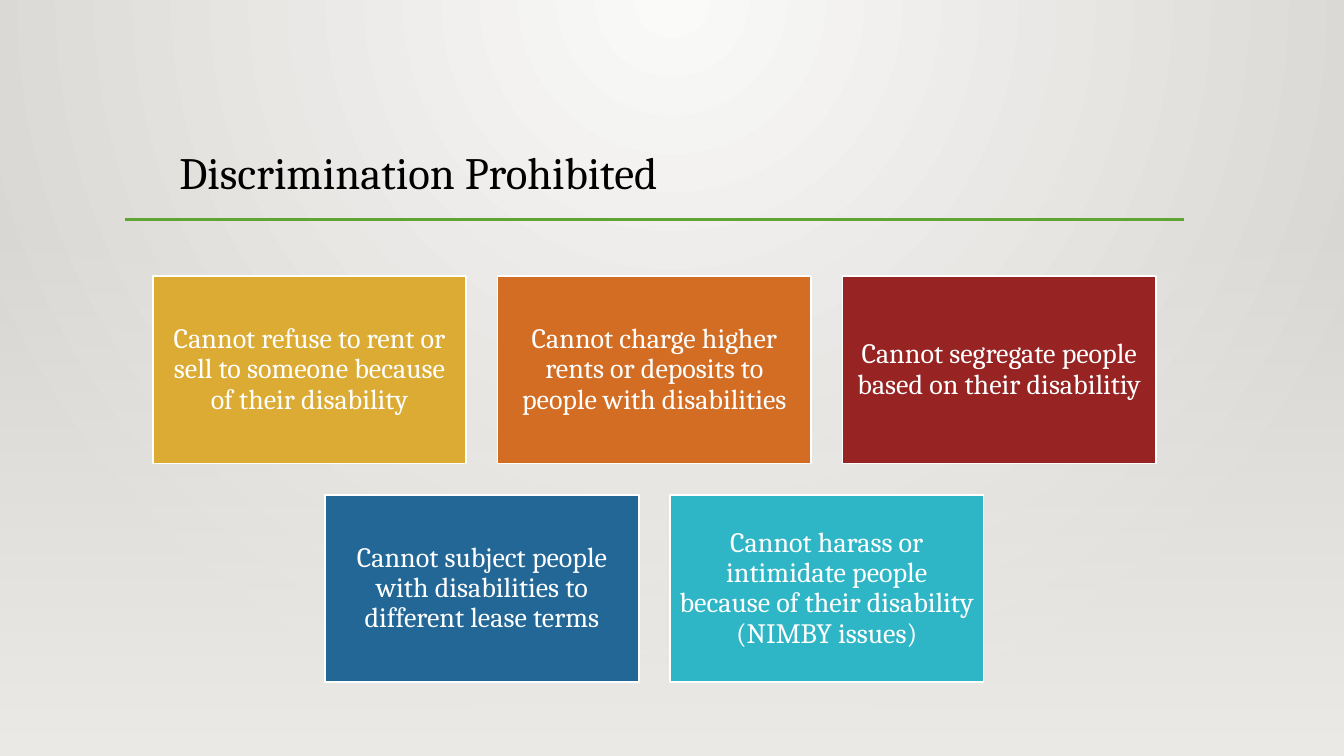
from lxml import etree
from pptx import Presentation
from pptx.dml.color import RGBColor
from pptx.enum.shapes import MSO_CONNECTOR, MSO_SHAPE
from pptx.enum.text import MSO_ANCHOR, MSO_AUTO_SIZE, PP_ALIGN
from pptx.oxml import parse_xml
from pptx.oxml.ns import nsdecls, qn
from pptx.util import Inches, Pt

RECTANGLE = MSO_SHAPE.RECTANGLE
STRAIGHT = MSO_CONNECTOR.STRAIGHT
MIDDLE, BOTTOM = MSO_ANCHOR.MIDDLE, MSO_ANCHOR.BOTTOM
LEFT, CENTER = PP_ALIGN.LEFT, PP_ALIGN.CENTER
NO_AUTOFIT = MSO_AUTO_SIZE.NONE

TITLE = "Discrimination Prohibited"
PROHIBITION_ROWS = [
    [
        ("Cannot refuse to rent or sell to someone because of their disability", "gold"),
        ("Cannot charge higher rents or deposits to people with disabilities", "orange"),
        ("Cannot segregate people based on their disabilitiy", "red"),
    ],
    [
        ("Cannot subject people with disabilities to different lease terms", "blue"),
        ("Cannot harass or intimidate people because of their disability (NIMBY issues)", "teal"),
    ],
]
COLORS = {
    "gold": "DCAB34", "orange": "D26D23", "red": "972323",
    "blue": "236797", "teal": "2FB6C6", "green": "5FA534",
    "black": "000000", "white": "FFFFFF",
    "glow": "FAFAF9", "edge": "D7D5D2", "floor": "EDEBE7",
}
FONT = "Cambria"
SLIDE_W, SLIDE_H = 13.33, 7.5
CARD_W, CARD_H, GAP = 3.11, 1.86, 0.31
CARDS_TOP, CARDS_CENTER = 2.74, 6.49
FLOOR_TOP = 2.21

RADIAL = '<a:path path="circle"><a:fillToRect l="43000" r="43000" b="100000"/></a:path>'
DOWNWARD = '<a:lin ang="5400000" scaled="0"/>'


def rgb(name):
    return RGBColor.from_string(COLORS[name])


def make_gradient(solid_fill, start, end, direction, start_alpha=100):
    """Swap a solidFill element for a two-stop gradient."""
    gradient = parse_xml(
        f'<a:gradFill {nsdecls("a")} rotWithShape="1"><a:gsLst>'
        f'<a:gs pos="0"><a:srgbClr val="{COLORS[start]}">'
        f'<a:alpha val="{start_alpha * 1000}"/></a:srgbClr></a:gs>'
        f'<a:gs pos="100000"><a:srgbClr val="{COLORS[end]}"/></a:gs>'
        f'</a:gsLst>{direction}</a:gradFill>'
    )
    solid_fill.getparent().replace(solid_fill, gradient)


def style_paragraph(paragraph, size, color, alignment):
    paragraph.alignment = alignment
    paragraph.line_spacing = 0.9
    paragraph.font.name = FONT
    paragraph.font.size = Pt(size)
    paragraph.font.color.rgb = rgb(color)


def add_backdrop(slide):
    slide.background.fill.solid()
    make_gradient(slide.element.xpath(".//p:bgPr/a:solidFill")[0],
                  "glow", "edge", RADIAL)
    floor = slide.shapes.add_shape(RECTANGLE, 0, Inches(FLOOR_TOP), Inches(SLIDE_W),
                                   Inches(SLIDE_H - FLOOR_TOP))
    floor.shadow.inherit = False
    floor.line.fill.background()
    floor.fill.solid()
    make_gradient(floor.element.spPr.find(qn("a:solidFill")),
                  "floor", "floor", DOWNWARD, start_alpha=0)


def add_heading(slide):
    title = slide.shapes.title
    title.left, title.top = Inches(1.68), Inches(0.88)
    title.width, title.height = Inches(10.41), Inches(1.15)
    frame = title.text_frame
    frame.text = TITLE
    frame.auto_size = NO_AUTOFIT
    frame.vertical_anchor = BOTTOM
    style_paragraph(frame.paragraphs[0], 32, "black", LEFT)

    rule = slide.shapes.add_connector(STRAIGHT, Inches(1.24), Inches(2.18),
                                      Inches(11.74), Inches(2.18))
    rule.line.color.rgb = rgb("green")
    rule.line.width = Pt(2.5)
    etree.SubElement(rule.element.spPr, qn("a:effectLst"))


def add_card(slide, left, top, text, color):
    card = slide.shapes.add_shape(RECTANGLE, Inches(left), Inches(top),
                                  Inches(CARD_W), Inches(CARD_H))
    card.shadow.inherit = False
    card.fill.solid()
    card.fill.fore_color.rgb = rgb(color)
    card.line.color.rgb = rgb("white")
    card.line.width = Pt(1.25)
    frame = card.text_frame
    frame.text = text
    frame.word_wrap = True
    frame.vertical_anchor = MIDDLE
    frame.margin_left = frame.margin_right = Inches(0.08)
    frame.margin_top = frame.margin_bottom = Inches(0.08)
    style_paragraph(frame.paragraphs[0], 20, "white", CENTER)


def main():
    prs = Presentation()
    prs.slide_width, prs.slide_height = Inches(SLIDE_W), Inches(SLIDE_H)
    slide = prs.slides.add_slide(prs.slide_layouts[5])
    add_backdrop(slide)
    add_heading(slide)
    for row, prohibitions in enumerate(PROHIBITION_ROWS):
        row_width = len(prohibitions) * (CARD_W + GAP) - GAP
        row_left = CARDS_CENTER - row_width / 2
        top = CARDS_TOP + row * (CARD_H + GAP)
        for column, (text, color) in enumerate(prohibitions):
            add_card(slide, row_left + column * (CARD_W + GAP), top, text, color)
    prs.save("out.pptx")


if __name__ == "__main__":
    main()
